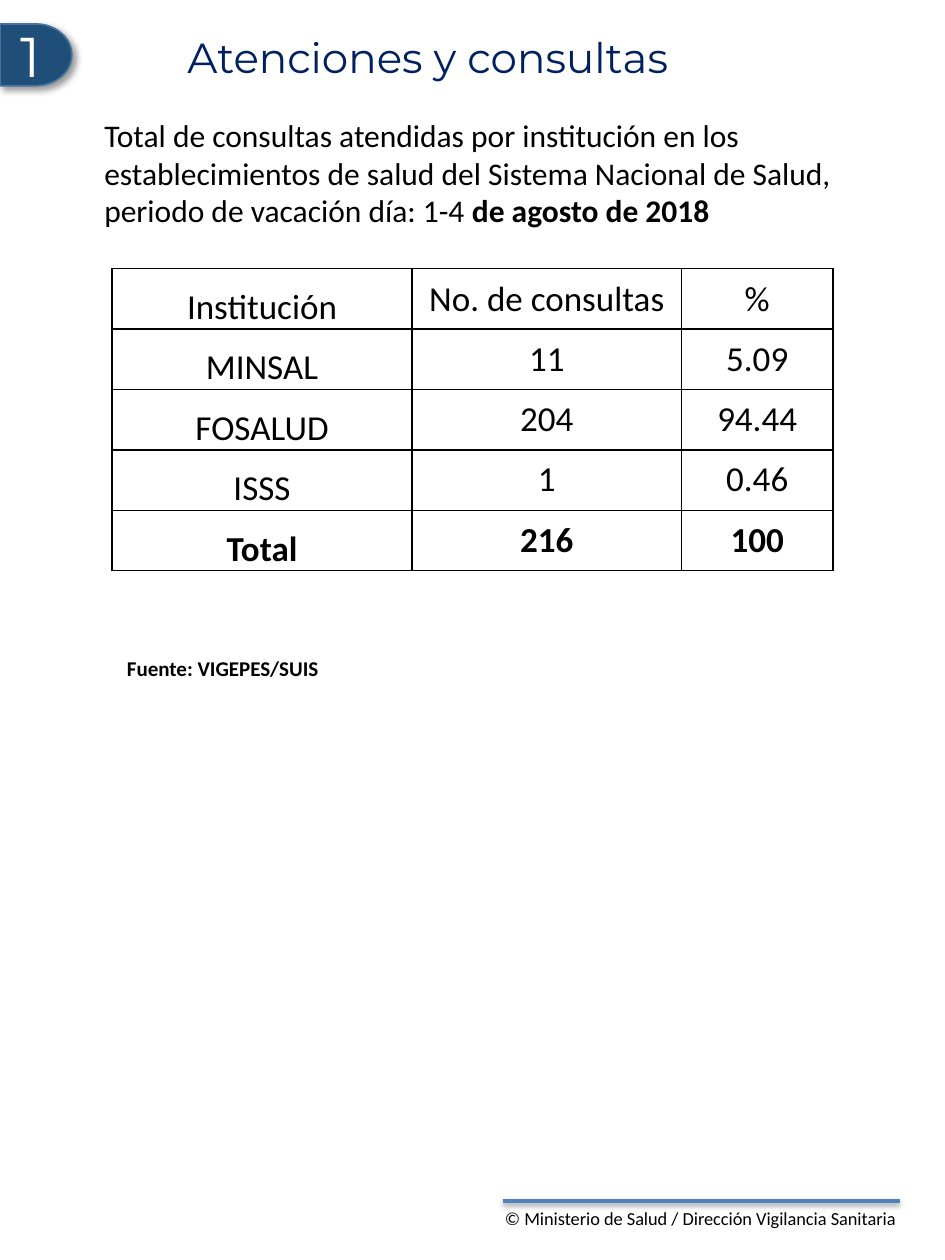
from lxml import etree
from pptx import Presentation
from pptx.dml.color import RGBColor
from pptx.enum.shapes import MSO_CONNECTOR, MSO_SHAPE
from pptx.enum.text import MSO_ANCHOR, MSO_AUTO_SIZE, PP_ALIGN
from pptx.oxml import parse_xml
from pptx.oxml.ns import nsdecls, qn
from pptx.util import Inches, Pt

CENTER, LEFT = PP_ALIGN.CENTER, PP_ALIGN.LEFT
MIDDLE, BOTTOM = MSO_ANCHOR.MIDDLE, MSO_ANCHOR.BOTTOM
DELAY, STRAIGHT = MSO_SHAPE.FLOWCHART_DELAY, MSO_CONNECTOR.STRAIGHT
FIT_SHAPE, NO_FIT = MSO_AUTO_SIZE.SHAPE_TO_FIT_TEXT, MSO_AUTO_SIZE.NONE
BODY_FONT, TITLE_FONT = "Calibri", "Montserrat"
COLORS = {"text": "000000", "title": "002060", "badge": "1F4E79",
          "badge_line": "43739E", "rule": "4F81BD", "white": "FFFFFF"}
COLUMN_WIDTHS = [2.38, 2.14, 1.2]
ROW_HEIGHT = 0.48
ROWS = [
    ["Institución", "No. de consultas", "%"],
    ["MINSAL", "11", "5.09"],
    ["FOSALUD", "204", "94.44"],
    ["ISSS", "1", "0.46"],
    ["Total", "216", "100"],
]


def rgb(name):
    """Return the named colour."""
    return RGBColor.from_string(COLORS[name])


def format_runs(p, size, color="text", font=BODY_FONT, bold=False, align=LEFT):
    """Format a paragraph and all its runs."""
    p.alignment = align
    for r in p.runs:
        r.font.size = Pt(size)
        r.font.name = font
        r.font.bold = bold
        r.font.color.rgb = rgb(color)


def add_shadow(sp, alpha, blur, dist, angle):
    """Give a shape or connector an outer black shadow."""
    effects = parse_xml(
        f'<a:effectLst {nsdecls("a")}><a:outerShdw blurRad="{Pt(blur)}" '
        f'dist="{Pt(dist)}" dir="{angle * 60000}" algn="tl" rotWithShape="0">'
        f'<a:srgbClr val="{COLORS["text"]}"><a:alpha val="{alpha * 1000}"/>'
        '</a:srgbClr></a:outerShdw></a:effectLst>')
    sp_pr = sp._element.spPr
    for old in sp_pr.findall(qn("a:effectLst")):
        sp_pr.remove(old)
    sp_pr.append(effects)


def add_text(slide, box, text, size, bold=False, wrap=True):
    """Add a text box that grows with its text and return its paragraph."""
    tf = slide.shapes.add_textbox(*map(Inches, box)).text_frame
    tf.word_wrap = wrap
    tf.auto_size = FIT_SHAPE
    p = tf.paragraphs[0]
    p.text = text
    format_runs(p, size, bold=bold)
    return p


def add_title(slide, text):
    """Place and format the title."""
    title = slide.shapes.title
    title.left, title.top, title.width, title.height = map(
        Inches, (0.58, 0.23, 5.63, 0.44))
    tf = title.text_frame
    tf.text = text
    tf.auto_size = NO_FIT
    tf.vertical_anchor = MIDDLE
    tf.margin_left = tf.margin_right = Inches(0.1)
    tf.margin_top = tf.margin_bottom = Inches(0.1)
    format_runs(tf.paragraphs[0], 24, "title", TITLE_FONT, align=CENTER)


def add_badge(slide, number):
    """Add the section number at the left edge."""
    sp = slide.shapes.add_shape(DELAY, *map(Inches, (0, 0.19, 0.57, 0.49)))
    sp.fill.solid()
    sp.fill.fore_color.rgb = rgb("badge")
    sp.line.color.rgb = rgb("badge_line")
    sp.line.width = Pt(1)
    add_shadow(sp, 40, 4, 3, 45)
    tf = sp.text_frame
    tf.text = number
    tf.vertical_anchor = MIDDLE
    format_runs(tf.paragraphs[0], 32, "white", TITLE_FONT, align=CENTER)


def add_borders(cell):
    """Draw a thin border on every side of a cell."""
    tc_pr = cell._tc.get_or_add_tcPr()
    for i, side in enumerate("LRTB"):
        ln = etree.Element(qn(f"a:ln{side}"), w=str(Pt(1)))
        fill = etree.SubElement(ln, qn("a:solidFill"))
        etree.SubElement(fill, qn("a:srgbClr"), val=COLORS["text"])
        tc_pr.insert(i, ln)


def format_cell(cell, text, anchor, margin, bold):
    """Fill in one table cell."""
    cell.text = text
    cell.vertical_anchor = anchor
    cell.margin_left = cell.margin_right = cell.margin_top = Inches(margin)
    cell.margin_bottom = 0
    cell.fill.background()
    add_borders(cell)
    format_runs(cell.text_frame.paragraphs[0], 20, bold=bold, align=CENTER)


def add_consultations_table(slide):
    """Add the table of consultations by institution."""
    table = slide.shapes.add_table(
        len(ROWS), len(COLUMN_WIDTHS), Inches(0.89), Inches(2.13),
        Inches(sum(COLUMN_WIDTHS)), Inches(ROW_HEIGHT * len(ROWS))).table
    table.first_row = table.horz_banding = False
    for column, width in zip(table.columns, COLUMN_WIDTHS):
        column.width = Inches(width)
    for i, row in enumerate(ROWS):
        table.rows[i].height = Inches(ROW_HEIGHT)
        for j, text in enumerate(row):
            format_cell(table.cell(i, j), text, MIDDLE if j else BOTTOM,
                        0 if i and j else 0.01, row[0] == "Total")


def add_footer(slide):
    """Add the footer rule and the credit under it."""
    y = Inches(9.53)
    rule = slide.shapes.add_connector(STRAIGHT, Inches(3.99), y, Inches(7.14), y)
    rule.line.color.rgb = rgb("rule")
    rule.line.width = Pt(2)
    add_shadow(rule, 38, 3.1, 1.6, 90)
    add_text(slide, (3.91, 9.53, 3.36, 0.45),
             "© Ministerio de Salud / Dirección Vigilancia Sanitaria",
             10.5, wrap=False)


def main():
    """Build and save the slide."""
    prs = Presentation()
    prs.slide_width, prs.slide_height = Inches(7.5), Inches(10)
    slide = prs.slides.add_slide(prs.slide_layouts[5])
    add_footer(slide)
    add_title(slide, "Atenciones y consultas")
    add_badge(slide, "1")
    add_consultations_table(slide)
    p = add_text(slide, (0.73, 0.87, 6.04, 1.01),
                 "Total de consultas atendidas por institución en los "
                 "establecimientos de salud del Sistema Nacional de Salud, "
                 "periodo de vacación día: 1-4 ", 18)
    p.add_run().text = "de agosto de 2018"
    format_runs(p, 18)
    p.runs[-1].font.bold = True
    add_text(slide, (0.91, 5.15, 2.84, 0.3), "Fuente: VIGEPES/SUIS", 12, bold=True)
    prs.save("out.pptx")


if __name__ == "__main__":
    main()
